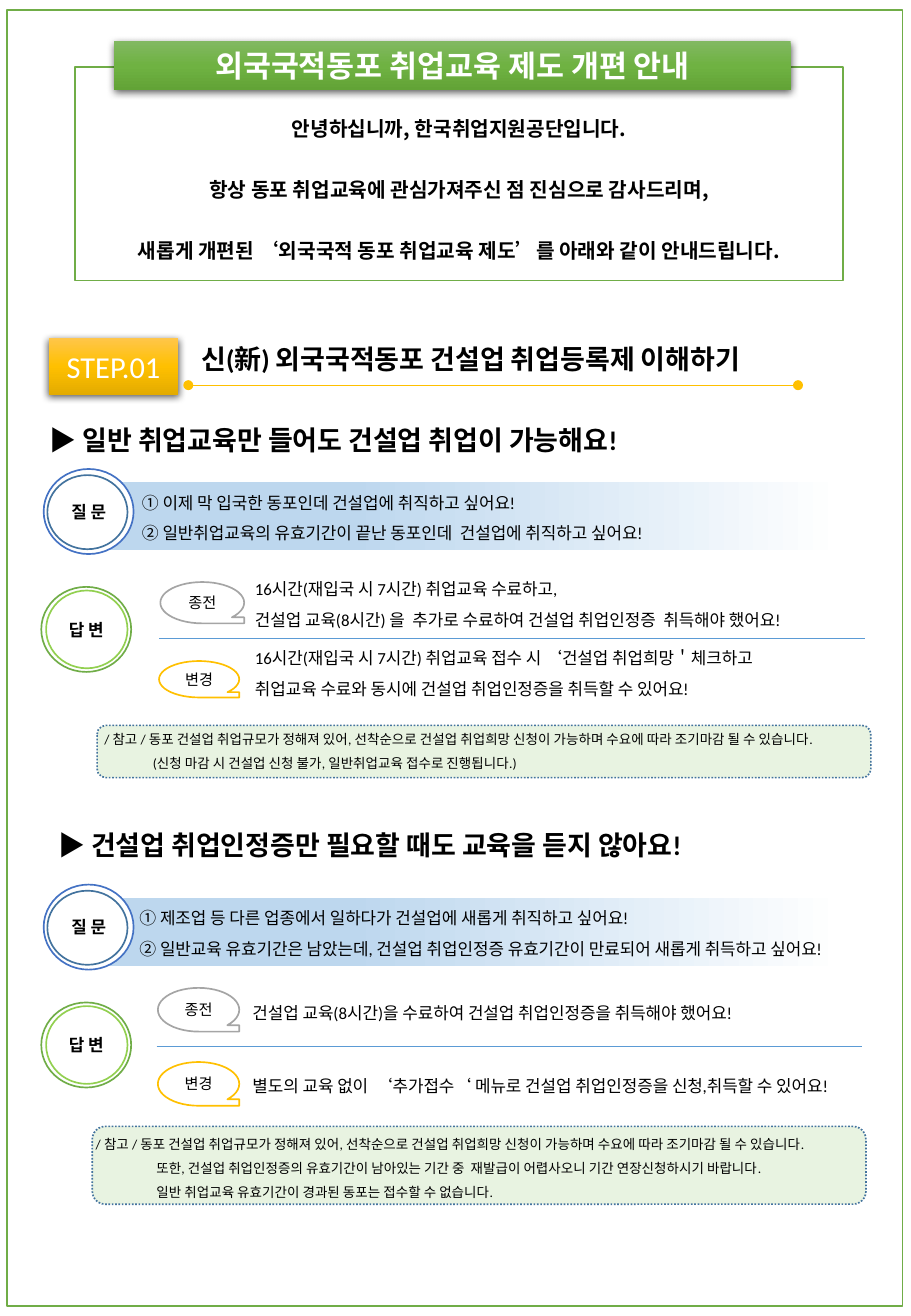
import pptx
import pptx.util
import pptx.oxml
import pptx.oxml.ns
import pptx.dml.color
import pptx.enum.dml
import pptx.enum.shapes
import pptx.enum.text

Inches, Pt = pptx.util.Inches, pptx.util.Pt
SHAPE = pptx.enum.shapes.MSO_SHAPE
ALIGN = pptx.enum.text.PP_ALIGN
ANCHOR = pptx.enum.text.MSO_ANCHOR

TITLE = "외국국적동포 취업교육 제도 개편 안내"
GREETING = [
    "안녕하십니까, 한국취업지원공단입니다.",
    "항상 동포 취업교육에 관심가져주신 점 진심으로 감사드리며,",
    "새롭게 개편된 ‘외국국적 동포 취업교육 제도’를 아래와 같이 안내드립니다.",
]
STEP = "STEP.01"
STEP_TITLE = "신(新) 외국국적동포 건설업 취업등록제 이해하기"
NOTE = ("/ 참고 / 동포 건설업 취업규모가 정해져 있어, 선착순으로 건설업 취업희망 신청이 "
        "가능하며 수요에 따라 조기마감 될 수 있습니다.")
SECTIONS = [
    {
        "top": 3.86,
        "heading": ("▶ 일반 취업교육만 들어도 건설업 취업이 가능해요!", 0.31, 3.44),
        "question_left": 1.07,
        "questions": [
            "① 이제 막 입국한 동포인데 건설업에 취직하고 싶어요!",
            "② 일반취업교육의 유효기간이 끝난 동포인데  건설업에 취직하고 싶어요!",
        ],
        "answers": [
            ("종전", "A5A5A5", (1.32, 4.79, 0.69, 0.34), (2, 4.63), [
                "16시간(재입국 시 7시간) 취업교육 수료하고,",
                "건설업 교육(8시간) 을  추가로 수료하여 건설업 취업인정증  취득해야 했어요!"]),
            ("변경", "FFC000", (1.31, 5.44, 0.66, 0.3), (2, 5.2), [
                "16시간(재입국 시 7시간) 취업교육 접수 시 ‘건설업 취업희망＇체크하고",
                "취업교육 수료와 동시에 건설업 취업인정증을 취득할 수 있어요!"]),
        ],
        "divider": (1.31, 5.25),
        "note_box": (0.8, 5.97, 6.37, 0.43),
        "note_at": (0.76, 5.9),
        "note_indent": 0.4,
        "notes": ["(신청 마감 시 건설업 신청 불가, 일반취업교육 접수로 진행됩니다.)"],
    },
    {
        "top": 7.28,
        "heading": ("▶ 건설업 취업인정증만 필요할 때도 교육을 듣지 않아요!", 0.38, 6.77),
        "question_left": 1.05,
        "questions": [
            "① 제조업 등 다른 업종에서 일하다가 건설업에 새롭게 취직하고 싶어요!",
            "② 일반교육 유효기간은 남았는데, 건설업 취업인정증 유효기간이 만료되어 새롭게 취득하고 싶어요!",
        ],
        "answers": [
            ("종전", "A5A5A5", (1.3, 8.13, 0.67, 0.36), (1.98, 8.12), [
                "건설업 교육(8시간)을 수료하여 건설업 취업인정증을 취득해야 했어요!"]),
            ("변경", "FFC000", (1.3, 8.74, 0.67, 0.36), (1.98, 8.72), [
                "별도의 교육 없이  ‘추가접수‘ 메뉴로 건설업 취업인정증을 신청,취득할 수 있어요!"]),
        ],
        "divider": (1.29, 8.61),
        "note_box": (0.76, 9.27, 6.37, 0.64),
        "note_at": (0.69, 9.23),
        "note_indent": 0.5,
        "notes": [
            "또한, 건설업 취업인정증의 유효기간이 남아있는 기간 중  재발급이 어렵사오니 기간 연장신청하시기 바랍니다.",
            "일반 취업교육 유효기간이 경과된 동포는 접수할 수 없습니다.",
        ],
    },
]
RIGHT_EDGE = 7.45
BAND = [(33, "BDD7EE"), (100, "FFFFFF")]
GREEN = [(0, "81B861"), (50, "6FB242"), (100, "62A336")]
GOLD = [(0, "FFC64B"), (50, "FFC000"), (100, "E3AB00")]
HEADING = {"size": Pt(16), "bold": True}
BODY = {"size": Pt(10)}
BADGE = {"size": Pt(10), "bold": True}
TAG = {"size": Pt(9)}
SMALL = {"size": Pt(8)}


def rgb(value):
    return pptx.dml.color.RGBColor.from_string(value)


def add_xml(parent, tag, attrs="", inner=""):
    ns = pptx.oxml.ns.nsdecls("a")
    parent.append(pptx.oxml.parse_xml(f"<a:{tag} {ns} {attrs}>{inner}</a:{tag}>"))


def write(sp, lines, fmt, color="000000", align=None, spacing=None, font="Calibri", indent=0):
    tf = sp.text_frame
    tf.word_wrap = True
    for i, line in enumerate(lines):
        p = tf.paragraphs[0] if i == 0 else tf.add_paragraph()
        if align is not None:
            p.alignment = align
        if spacing:
            p.line_spacing = spacing
        if indent and i:
            p._p.get_or_add_pPr().set("marL", str(Inches(indent)))
        r = p.add_run()
        r.text = line
        for name, value in {"name": font, **fmt}.items():
            setattr(r.font, name, value)
        r.font.color.rgb = rgb(color)
        add_xml(r._r.get_or_add_rPr(), "ea", 'typeface="Noto Sans CJK KR"')


def text(s, box, lines, fmt, **options):
    sp = s.shapes.add_textbox(*map(Inches, box))
    write(sp, lines, fmt, **options)


def shape(s, kind, box, fill=None, line=None, grad=None, angle=0, shadow=False):
    sp = s.shapes.add_shape(kind, *map(Inches, box))
    spPr = sp._element.spPr
    if grad:
        stops = "".join(f'<a:gs pos="{pos * 1000}"><a:srgbClr val="{c}"/></a:gs>' for pos, c in grad)
        add_xml(spPr, "gradFill", 'rotWithShape="1"',
                f'<a:gsLst>{stops}</a:gsLst><a:lin ang="{angle * 60000}" scaled="0"/>')
    elif fill:
        sp.fill.solid()
        sp.fill.fore_color.rgb = rgb(fill)
    else:
        sp.fill.background()
    if line:
        sp.line.color.rgb = rgb(line)
        sp.line.width = Pt(1)
    else:
        sp.line.fill.background()
    sp.shadow.inherit = False
    if shadow:
        add_xml(spPr.find(pptx.oxml.ns.qn("a:effectLst")), "outerShdw",
                f'blurRad="{Pt(4.5)}" dist="{Pt(1.5)}" dir="5400000" algn="ctr" rotWithShape="0"',
                '<a:srgbClr val="000000"><a:alpha val="63000"/></a:srgbClr>')
    return sp


def label(sp, content, fmt, color="000000"):
    tf = sp.text_frame
    for side in ("left", "right", "top", "bottom"):
        setattr(tf, f"margin_{side}", 0)
    tf.vertical_anchor = ANCHOR.MIDDLE
    write(sp, [content], fmt, color=color, align=ALIGN.CENTER)


def rule(s, left, right, y, color, ends=False):
    c = s.shapes.add_connector(pptx.enum.shapes.MSO_CONNECTOR.STRAIGHT,
                               *map(Inches, (left, y, right, y)))
    c.line.color.rgb = rgb(color)
    c.line.width = Pt(0.5)
    if ends:
        for tag in ("headEnd", "tailEnd"):
            add_xml(c.line._ln, tag, 'type="oval"')
    add_xml(c._element.spPr, "effectLst")


def badge(s, box, inner, content, color, inner_color):
    label(shape(s, SHAPE.OVAL, box, "FFFFFF", color), content, BADGE)
    shape(s, SHAPE.OVAL, inner, line=inner_color)


def section(s, d):
    top = d["top"]
    heading, left, y = d["heading"]
    text(s, (left, y, 6.5, 0.37), [heading], HEADING)

    shape(s, SHAPE.RECTANGLE, (0.89, top + 0.11, 6.05, 0.56), grad=BAND)
    badge(s, (0.36, top, 0.74, 0.7), (0.39, top + 0.05, 0.66, 0.61), "질 문", "4472C4", "43739E")
    left = d["question_left"]
    text(s, (left, top + 0.06, RIGHT_EDGE - left, 0.61), d["questions"], BODY, spacing=1.5)

    badge(s, (0.34, top + 0.97, 0.74, 0.7), (0.38, top + 1, 0.67, 0.64), "답 변", "70AD47", "92D050")
    for tag, color, box, (left, y), lines in d["answers"]:
        text(s, (left, y, RIGHT_EDGE - left, 0.09 + 0.26 * len(lines)), lines, BODY, spacing=1.5)
        label(shape(s, SHAPE.FLOWCHART_SEQUENTIAL_ACCESS_STORAGE, box, "FFFFFF", color), tag, TAG)
    left, y = d["divider"]
    rule(s, left, left + 5.81, y, "5B9BD5")

    sp = shape(s, SHAPE.ROUNDED_RECTANGLE, d["note_box"], "E2F0D9", "43739E")
    sp.line.dash_style = pptx.enum.dml.MSO_LINE.ROUND_DOT
    add_xml(sp.fill._xPr.find(".//" + pptx.oxml.ns.qn("a:srgbClr")), "alpha", 'val="77000"')
    left, y = d["note_at"]
    text(s, (left, y, RIGHT_EDGE - left, d["note_box"][3] + 0.07), [NOTE] + d["notes"], SMALL,
         spacing=1.5, indent=d["note_indent"])


def main():
    prs = pptx.Presentation()
    prs.slide_width, prs.slide_height = Inches(7.5), Inches(10.83)
    s = prs.slides.add_slide(prs.slide_layouts[6])

    shape(s, SHAPE.RECTANGLE, (0.06, 0.08, 7.37, 10.67), line="70AD47")
    shape(s, SHAPE.RECTANGLE, (0.62, 0.55, 6.32, 1.76), "FFFFFF", "70AD47")
    sp = shape(s, SHAPE.RECTANGLE, (0.94, 0.34, 5.57, 0.4), grad=GREEN, angle=90, shadow=True)
    label(sp, TITLE, {"size": Pt(18), "bold": True}, "FFFFFF")
    text(s, (0.62, 0.61, 6.32, 1.62), GREETING, {"size": Pt(12), "bold": True},
         align=ALIGN.CENTER, spacing=2.5, font="Noto Sans CJK KR")

    sp = shape(s, SHAPE.RECTANGLE, (0.4, 2.78, 1.07, 0.47), grad=GOLD, angle=90, shadow=True)
    label(sp, STEP, {"size": Pt(18)}, "FFFFFF")
    rule(s, 1.55, 6.57, 3.17, "FFC000", ends=True)
    text(s, (1.56, 2.77, 5.21, 0.37), [STEP_TITLE], HEADING)

    for d in SECTIONS:
        section(s, d)
    prs.save("out.pptx")


if __name__ == "__main__":
    main()
